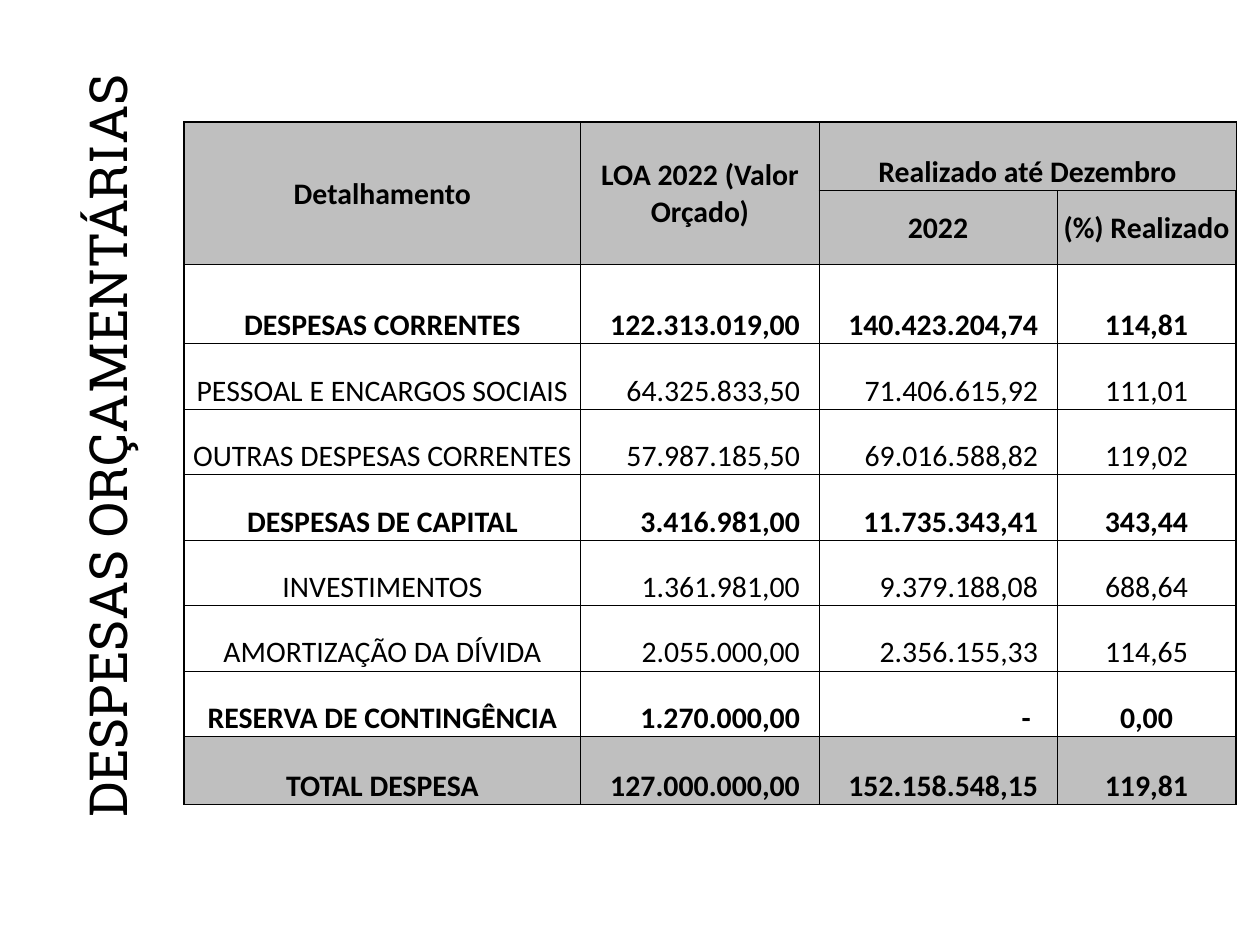
from dataclasses import dataclass

from lxml import etree
from pptx import Presentation
from pptx import util as u
from pptx.dml.color import RGBColor
from pptx.enum import text
from pptx.oxml.ns import qn

COLOURS = {"ink": "000000", "band": "BFBFBF"}
SLIDE_WIDTH, SLIDE_HEIGHT = u.Inches(10), u.Inches(7.5)
CENTRE, RIGHT = text.PP_ALIGN.CENTER, text.PP_ALIGN.RIGHT
MIDDLE, BOTTOM = text.MSO_ANCHOR.MIDDLE, text.MSO_ANCHOR.BOTTOM

# Percent of the slide's width or height
TITLE_AREA = (5.5, 8.4, 7.1, 77.6)
TABLE_CORNER = (14.6, 12.93)
COLUMN_SHARES = [31.5, 18.9, 18.9, 14.2]
ROW_SHARES = [7.2, 4.27, 8.4] + [6.93] * 6 + [7.2]
HEADER_ROWS = 2


@dataclass(frozen=True)
class Heading:
    label: str
    row: int
    column: int
    rows: int = 1
    columns: int = 1
    anchor: text.MSO_ANCHOR = MIDDLE


@dataclass(frozen=True)
class Expense:
    name: str
    budget: str
    spent: str
    percent: str
    bold: bool = False


HEADINGS = [
    Heading("Detalhamento", 0, 0, rows=2),
    Heading("LOA 2022 (Valor Orçado)", 0, 1, rows=2),
    Heading("Realizado até Dezembro", 0, 2, columns=2, anchor=BOTTOM),
    Heading("2022", 1, 2),
    Heading("(%) Realizado", 1, 3),
]
EXPENSES = [
    Expense("DESPESAS CORRENTES", "122.313.019,00", "140.423.204,74", "114,81", True),
    Expense("PESSOAL E ENCARGOS SOCIAIS", "64.325.833,50", "71.406.615,92", "111,01"),
    Expense("OUTRAS DESPESAS CORRENTES", "57.987.185,50", "69.016.588,82", "119,02"),
    Expense("DESPESAS DE CAPITAL", "3.416.981,00", "11.735.343,41", "343,44", True),
    Expense("INVESTIMENTOS", "1.361.981,00", "9.379.188,08", "688,64"),
    Expense("AMORTIZAÇÃO DA DÍVIDA", "2.055.000,00", "2.356.155,33", "114,65"),
    Expense("RESERVA DE CONTINGÊNCIA", "1.270.000,00", "-", "0,00", True),
    Expense("TOTAL DESPESA", "127.000.000,00", "152.158.548,15", "119,81", True),
]


def across(percent: float) -> int:
    return round(SLIDE_WIDTH * percent / 100)


def down(percent: float) -> int:
    return round(SLIDE_HEIGHT * percent / 100)


def set_all(target, values: dict) -> None:
    for name, value in values.items():
        setattr(target, name, value)


def write(frame, words: str, font: str, size: float, align, bold: bool = False) -> None:
    para = frame.paragraphs[0]
    para.alignment = align
    span = para.add_run()
    span.text = words
    set_all(span.font, {"name": font, "size": u.Pt(size), "bold": bold})
    span.font.color.rgb = RGBColor.from_string(COLOURS["ink"])


def add_title(page) -> None:
    left, top, width, height = TITLE_AREA
    box = page.shapes.add_textbox(across(left), down(top), across(width), down(height))
    frame = box.text_frame
    set_all(frame, {"word_wrap": False, "auto_size": text.MSO_AUTO_SIZE.SHAPE_TO_FIT_TEXT})
    frame._txBody.bodyPr.set("vert", "vert270")
    write(frame, "DESPESAS ORÇAMENTÁRIAS", "Roboto Slab", 30, CENTRE)


def add_borders(cell, row: int, column: int) -> None:
    """Draw thin inner lines and a thicker line round the table."""
    outer = {
        "lnL": column == 0,
        "lnR": column == len(COLUMN_SHARES) - 1,
        "lnT": row == 0,
        "lnB": row == len(ROW_SHARES) - 1,
    }
    properties = cell._tc.get_or_add_tcPr()
    for index, (side, thick) in enumerate(outer.items()):
        line = etree.Element(qn(f"a:{side}"), w=str(u.Pt(1 if thick else 0.5)))
        fill = etree.SubElement(line, qn("a:solidFill"))
        etree.SubElement(fill, qn("a:srgbClr"), val=COLOURS["ink"])
        properties.insert(index, line)


def style_cell(cell, row: int, column: int) -> None:
    margin = u.Inches(0.01)
    set_all(cell, {"margin_left": margin, "margin_right": margin, "margin_top": margin,
                   "margin_bottom": 0, "vertical_anchor": BOTTOM})
    if row < HEADER_ROWS or row == len(ROW_SHARES) - 1:
        cell.fill.solid()
        cell.fill.fore_color.rgb = RGBColor.from_string(COLOURS["band"])
    else:
        cell.fill.background()
    add_borders(cell, row, column)


def fill_heading(table, heading: Heading) -> None:
    cell = table.cell(heading.row, heading.column)
    if heading.rows * heading.columns > 1:
        cell.merge(table.cell(heading.row + heading.rows - 1,
                              heading.column + heading.columns - 1))
    cell.vertical_anchor = heading.anchor
    write(cell.text_frame, heading.label, "Calibri", 17, CENTRE, True)


def fill_expense(table, row: int, expense: Expense) -> None:
    values = (expense.name, expense.budget, expense.spent, expense.percent)
    for column, value in enumerate(values):
        cell = table.cell(row, column)
        is_amount = column in (1, 2)
        if is_amount:
            cell.margin_right = u.Inches(0.21 if value == "-" else 0.15)
        write(cell.text_frame, value, "Calibri", 17, RIGHT if is_amount else CENTRE,
              expense.bold)


def add_expense_table(page) -> None:
    left, top = TABLE_CORNER
    table = page.shapes.add_table(
        len(ROW_SHARES), len(COLUMN_SHARES), across(left), down(top),
        across(sum(COLUMN_SHARES)), down(sum(ROW_SHARES))).table
    set_all(table, {"first_row": False, "horz_banding": False})
    for column, share in zip(table.columns, COLUMN_SHARES):
        column.width = across(share)
    for row, share in zip(table.rows, ROW_SHARES):
        row.height = down(share)
    for row in range(len(ROW_SHARES)):
        for column in range(len(COLUMN_SHARES)):
            style_cell(table.cell(row, column), row, column)
    for heading in HEADINGS:
        fill_heading(table, heading)
    for row, expense in enumerate(EXPENSES, HEADER_ROWS):
        fill_expense(table, row, expense)


def main() -> None:
    deck = Presentation()
    set_all(deck, {"slide_width": SLIDE_WIDTH, "slide_height": SLIDE_HEIGHT})
    page = deck.slides.add_slide(deck.slide_layouts[6])
    add_title(page)
    add_expense_table(page)
    deck.save("out.pptx")


if __name__ == "__main__":
    main()
